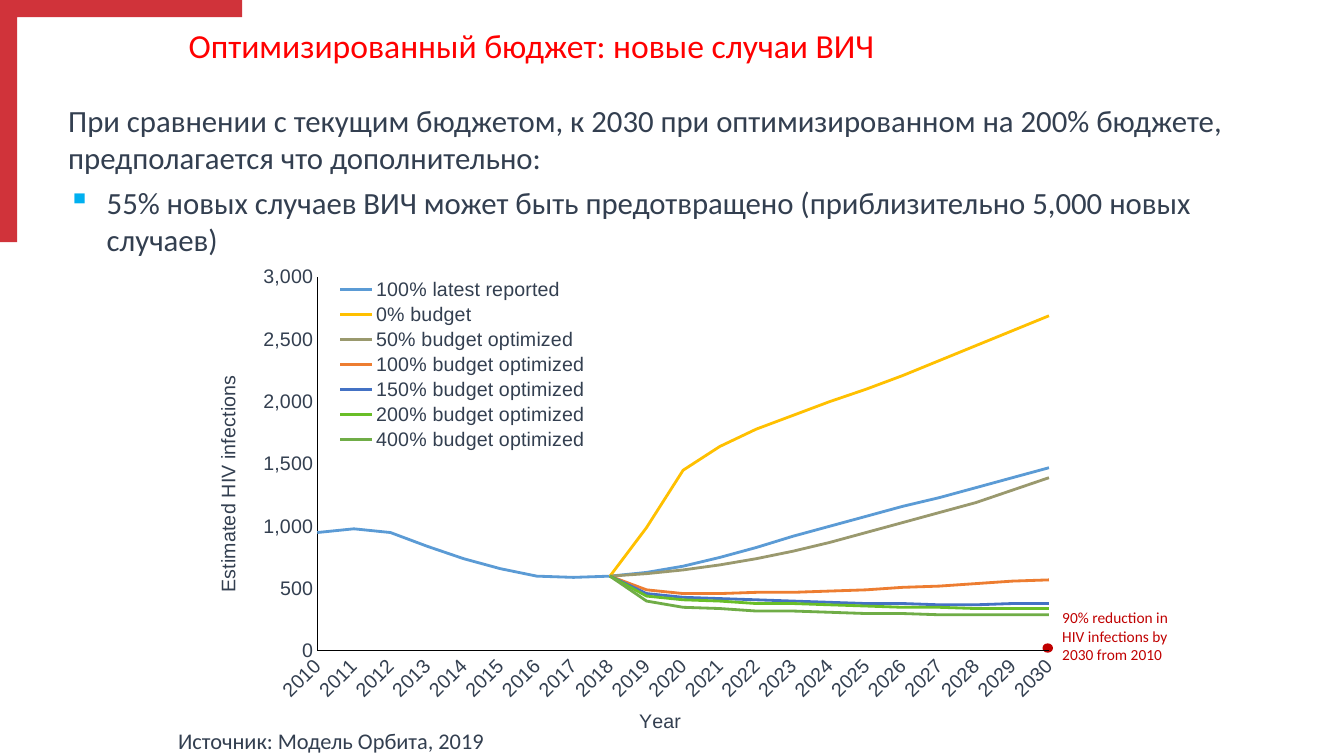
from dataclasses import dataclass

import lxml.etree
import pptx
import pptx.chart.data
import pptx.dml.color
import pptx.enum.chart
import pptx.enum.shapes
import pptx.enum.text
import pptx.oxml.ns
import pptx.util

Cm, Pt = pptx.util.Cm, pptx.util.Pt
RGB = pptx.dml.color.RGBColor.from_string
qn = pptx.oxml.ns.qn


@dataclass(frozen=True)
class Theme:
    ink: str = "333F50"
    title: str = "FF0000"
    target: str = "C00000"
    frame: str = "D0333A"
    bullet: str = "00B0F0"
    axis: str = "000000"
    text_font: str = "Calibri"
    chart_font: str = "Arial"
    title_size: int = 24
    body_size: int = 22
    source_size: int = 16
    chart_size: int = 14
    note_size: int = 11


theme = Theme()


def style_font(font, size, color, name=theme.text_font):
    for key, value in {"size": Pt(size), "name": name, "bold": False}.items():
        setattr(font, key, value)
    font.color.rgb = RGB(color)


def make_layout(x, y, width, height, inner=False):
    """Manual chart layout, as fractions of the chart area."""
    layout = lxml.etree.Element(qn("c:layout"))
    manual = lxml.etree.SubElement(layout, qn("c:manualLayout"))
    values = {"layoutTarget": "inner"} if inner else {}
    values |= {"xMode": "edge", "yMode": "edge", "x": x, "y": y, "w": width, "h": height}
    for tag, value in values.items():
        lxml.etree.SubElement(manual, qn(f"c:{tag}"), val=str(value))
    return layout


presentation = pptx.Presentation()
presentation.slide_width, presentation.slide_height = Cm(33.87), Cm(19.05)
slide = presentation.slides.add_slide(presentation.slide_layouts[5])

# Title
title = slide.shapes.title
title_box = {"left": Cm(4.5), "top": Cm(0.64), "width": Cm(25.12), "height": Cm(1.14)}
for key, value in title_box.items():
    setattr(title, key, value)
title.text_frame.text = "Оптимизированный бюджет: новые случаи ВИЧ"
title.text_frame.vertical_anchor = pptx.enum.text.MSO_ANCHOR.MIDDLE
paragraph = title.text_frame.paragraphs[0]
paragraph.alignment = pptx.enum.text.PP_ALIGN.LEFT
paragraph.line_spacing = 0.9
style_font(paragraph.runs[0].font, theme.title_size, theme.title)

# Text boxes, with the 2030 target grouped with its marker
target = slide.shapes.add_group_shape()
text_boxes = [
    (slide.shapes, (1.47, 2.44, 31.6, 4.24), theme.body_size, theme.ink, 6, [
        "При сравнении с текущим бюджетом, к 2030 при оптимизированном на 200% бюджете, "
        "предполагается что дополнительно:",
        "55% новых случаев ВИЧ может быть предотвращено (приблизительно 5,000 новых случаев)",
    ]),
    (target.shapes, (26.52, 15.21, 3.3, 1.68), theme.note_size, theme.target, 0,
     ["90% reduction in HIV infections by 2030 from 2010"]),
    (slide.shapes, (4.24, 18.19, 12.01, 0.94), theme.source_size, theme.ink, 0,
     ["Источник: Модель Орбита, 2019"]),
]
for shapes, box, size, color, space_before, texts in text_boxes:
    frame = shapes.add_textbox(*map(Cm, box)).text_frame
    frame.word_wrap = True
    frame.text = "\n".join(texts)
    for paragraph in frame.paragraphs:
        paragraph.space_before = Pt(space_before)
        style_font(paragraph.runs[0].font, size, color)
    # Only the finding below the introduction carries a bullet
    for paragraph in frame.paragraphs[1:]:
        properties = paragraph._p.get_or_add_pPr()
        properties.set("marL", str(Cm(0.97)))
        properties.set("indent", str(-Cm(0.97)))
        bullet_color = lxml.etree.SubElement(properties, qn("a:buClr"))
        lxml.etree.SubElement(bullet_color, qn("a:srgbClr"), val=theme.bullet)
        lxml.etree.SubElement(properties, qn("a:buChar"), char="▪")

marker = target.shapes.add_shape(
    pptx.enum.shapes.MSO_SHAPE.OVAL, Cm(26.29), Cm(16.23), Cm(0.23), Cm(0.2))
marker.shadow.inherit = False
marker.fill.solid()
marker.fill.fore_color.rgb = marker.line.color.rgb = RGB(theme.target)
marker.line.width = Pt(1)

# Chart data: the budget scenarios branch off in 2018
years = range(2010, 2031)
scenarios = [
    ("100% latest reported", "5B9BD5",
     [950, 980, 950, 840, 740, 660, 600, 590, 600, 630, 680, 750, 830, 920,
      1000, 1080, 1160, 1230, 1310, 1390, 1470]),
    ("0% budget", "FFC000",
     [600, 990, 1450, 1640, 1780, 1890, 2000, 2100, 2210, 2330, 2450, 2570, 2690]),
    ("50% budget optimized", "9A996E",
     [600, 620, 650, 690, 740, 800, 870, 950, 1030, 1110, 1190, 1290, 1390]),
    ("100% budget optimized", "ED7D31",
     [600, 490, 460, 460, 470, 470, 480, 490, 510, 520, 540, 560, 570]),
    ("150% budget optimized", "4472C4",
     [600, 460, 430, 420, 410, 400, 390, 380, 380, 370, 370, 380, 380]),
    ("200% budget optimized", "69BE28",
     [600, 440, 410, 400, 380, 380, 370, 360, 350, 350, 340, 340, 340]),
    ("400% budget optimized", "70AD47",
     [600, 400, 350, 340, 320, 320, 310, 300, 300, 290, 290, 290, 290]),
]
chart_data = pptx.chart.data.CategoryChartData()
chart_data.categories = [str(year) for year in years]
for name, color, values in scenarios:
    chart_data.add_series(name, [None] * (len(years) - len(values)) + values)

# Chart
chart = slide.shapes.add_chart(
    pptx.enum.chart.XL_CHART_TYPE.LINE,
    Cm(5.18), Cm(6.45), Cm(22.71), Cm(12.17), chart_data).chart
chart.has_title = False
style_font(chart.font, theme.chart_size, theme.ink, theme.chart_font)
for series, (name, color, values) in zip(chart.plots[0].series, scenarios):
    series.smooth = False
    series.format.line.color.rgb = RGB(color)
    series.format.line.width = Pt(2)

# Axes
axes = [(chart.category_axis, "Year", 0.75),
        (chart.value_axis, "Estimated HIV infections", 0.5)]
for axis, caption, line_width in axes:
    axis_format = {"has_major_gridlines": False,
                   "major_tick_mark": pptx.enum.chart.XL_TICK_MARK.NONE,
                   "minor_tick_mark": pptx.enum.chart.XL_TICK_MARK.NONE}
    for key, value in axis_format.items():
        setattr(axis, key, value)
    axis.format.line.color.rgb = RGB(theme.axis)
    axis.format.line.width = Pt(line_width)
    style_font(axis.tick_labels.font, theme.chart_size, theme.ink, theme.chart_font)
    axis.axis_title.text_frame.text = caption
    run = axis.axis_title.text_frame.paragraphs[0].runs[0]
    style_font(run.font, theme.chart_size, theme.ink, theme.chart_font)

value_axis = chart.value_axis
for key, value in {"minimum_scale": 0, "maximum_scale": 3000, "major_unit": 500}.items():
    setattr(value_axis, key, value)
value_axis.tick_labels.number_format = "#,##0"
value_axis.tick_labels.number_format_is_linked = False
category_body = chart.category_axis._element.find(qn("c:txPr")).find(qn("a:bodyPr"))
category_body.set("rot", "-2700000")

# Lines start on the value axis itself
for element in value_axis._element.findall(qn("c:crossBetween")):
    value_axis._element.remove(element)
cross_between = lxml.etree.Element(qn("c:crossBetween"), val="midCat")
value_axis._element.find(qn("c:crosses")).addnext(cross_between)

# Legend inside the plot, and plot position
chart.has_legend = True
legend = chart.legend
legend.position = pptx.enum.chart.XL_LEGEND_POSITION.RIGHT
legend.include_in_layout = False
style_font(legend.font, theme.chart_size, theme.ink, theme.chart_font)
plot_area = chart._chartSpace.chart.plotArea
for parent in (plot_area, legend._element):
    for element in parent.findall(qn("c:layout")):
        parent.remove(element)
plot_area.insert(0, make_layout(0.124, 0.044, 0.812, 0.774, inner=True))
legend._element.find(qn("c:legendPos")).addnext(make_layout(0.14, 0.04, 0.29, 0.37))

# Corner frame
arm, thickness = Cm(6.1), Cm(0.43)
builder = slide.shapes.build_freeform(0, 0)
builder.add_line_segments([(arm, 0), (arm, thickness), (thickness, thickness),
                           (thickness, arm), (0, arm)], close=True)
corner = builder.convert_to_shape()
corner.shadow.inherit = False
corner.fill.solid()
corner.fill.fore_color.rgb = RGB(theme.frame)
corner.line.fill.background()

presentation.save("out.pptx")
